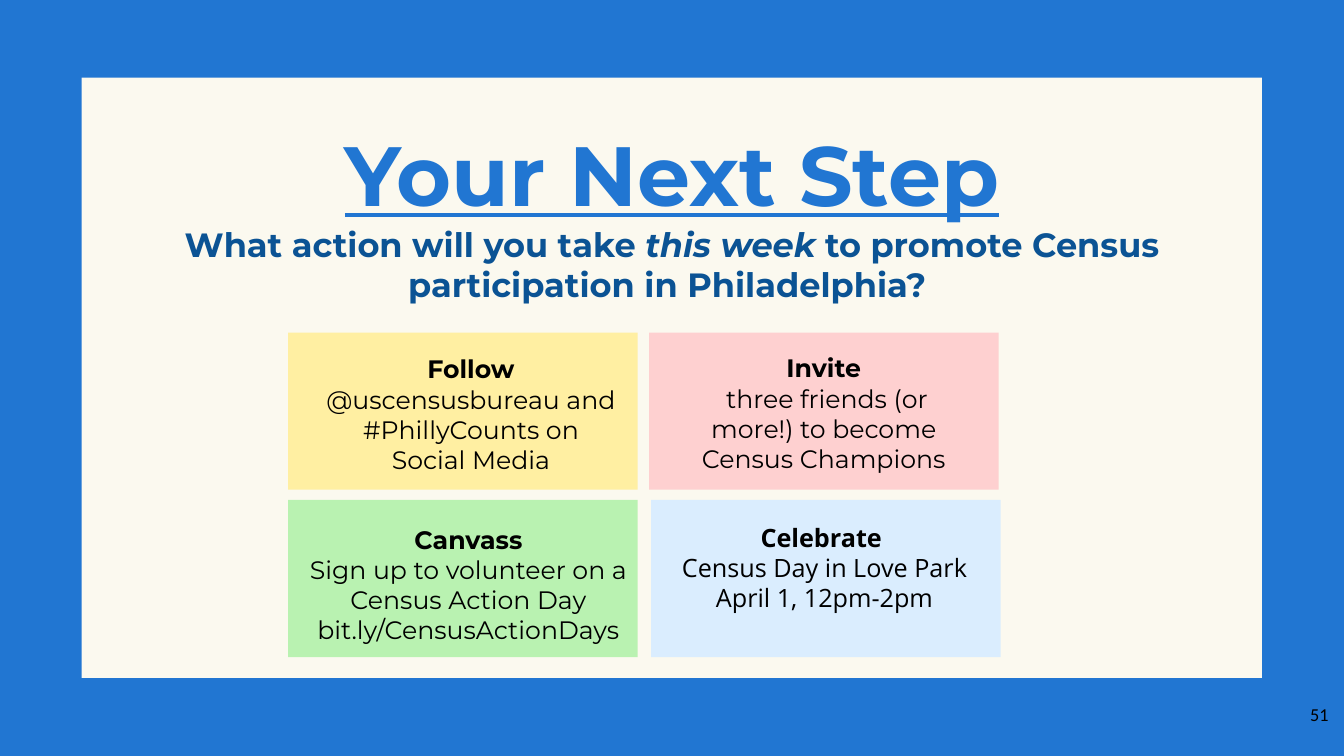
from pptx import Presentation
from pptx.dml.color import RGBColor
from pptx.enum.shapes import MSO_SHAPE
from pptx.enum.text import MSO_ANCHOR, PP_ALIGN
from pptx.util import Cm, Pt

RECTANGLE = MSO_SHAPE.RECTANGLE
TOP = MSO_ANCHOR.TOP
CENTER, RIGHT = PP_ALIGN.CENTER, PP_ALIGN.RIGHT

BLUE, NAVY, CREAM, BLACK = "2176D2", "0B5394", "FBF9EF", "000000"
WIDTH, HEIGHT = 33.87, 19.05
BAND, SIDE = 1.96, 2.06
CARD_WIDTH, CARD_HEIGHT = 8.81, 3.96

TITLE = "Your Next Step"
QUESTION = [
    ("What action will you take ", False),
    ("this week ", True),
    ("to promote Census participation in Philadelphia? ", False),
]
CARDS = [
    {"color": "FFEFA2", "at": (7.26, 8.38), "text_at": (7.92, 8.79, 7.9, 1.73),
     "font": "Montserrat",
     "lines": [[("Follow ", True),
                ("@uscensusbureau and #PhillyCounts on Social Media", False)]]},
    {"color": "FED0D0", "at": (16.36, 8.38), "text_at": (16.81, 8.76, 7.9, 2.79),
     "font": "Montserrat",
     "lines": [[("Invite", True)],
               [(" three friends (or more!) to become Census Champions", False)]]},
    {"color": "B9F2B1", "at": (7.26, 12.6), "text_at": (7.26, 13.08, 9.09, 2.13),
     "font": "Montserrat",
     "lines": [[("Canvass", True)],
               [("Sign up to volunteer on a Census Action Day", False)],
               [("bit.ly/CensusActionDays", False)]]},
    {"color": "DAEDFE", "at": (16.41, 12.6), "text_at": (16.26, 13.03, 9.04, 2.95),
     "font": "Open Sans",
     "lines": [[("Celebrate ", True)],
               [("Census Day in Love Park", False)],
               [("April 1, 12pm-2pm", False)]]},
]
PAGE_NUMBER = "51"


def rgb(color):
    return RGBColor.from_string(color)


def add_block(page, left, top, width, height, color):
    block = page.shapes.add_shape(RECTANGLE, Cm(left), Cm(top), Cm(width), Cm(height))
    block.shadow.inherit = False
    block.fill.solid()
    block.fill.fore_color.rgb = rgb(color)
    block.line.fill.background()


def add_frame(page, left, top, width, height):
    box = page.shapes.add_textbox(Cm(left), Cm(top), Cm(width), Cm(height))
    frame = box.text_frame
    frame.word_wrap = True
    frame.vertical_anchor = TOP
    return frame


def add_text(para, text, font, size, color, bold=False, italic=False,
             underline=False, align=CENTER):
    para.alignment = align
    span = para.add_run()
    span.text = text
    span.font.name = font
    span.font.size = Pt(size)
    span.font.bold = bold
    span.font.italic = italic
    span.font.underline = underline
    span.font.color.rgb = rgb(color)


def add_card(page, card):
    add_block(page, *card["at"], CARD_WIDTH, CARD_HEIGHT, card["color"])
    frame = add_frame(page, *card["text_at"])
    for index, line in enumerate(card["lines"]):
        para = frame.add_paragraph() if index else frame.paragraphs[0]
        for text, bold in line:
            add_text(para, text, font=card["font"], size=18, color=BLACK, bold=bold)


def main():
    deck = Presentation()
    deck.slide_width, deck.slide_height = Cm(WIDTH), Cm(HEIGHT)
    page = deck.slides.add_slide(deck.slide_layouts[6])
    page.background.fill.solid()
    page.background.fill.fore_color.rgb = rgb(CREAM)

    for top in (HEIGHT - BAND, 0):
        add_block(page, 0, top, WIDTH, BAND, BLUE)
    for left in (0, WIDTH - SIDE):
        add_block(page, left, 0, SIDE, HEIGHT, BLUE)

    heading = add_frame(page, 3.28, 2.97, 27.31, 2.82)
    add_text(heading.paragraphs[0], TITLE, font="Montserrat", size=60, color=BLUE,
             bold=True, underline=True)
    question = heading.add_paragraph()
    for text, italic in QUESTION:
        add_text(question, text, font="Montserrat", size=24, color=NAVY,
                 bold=True, italic=italic)

    for card in CARDS:
        add_card(page, card)

    number = add_frame(page, 31.7, 17.6, 2.03, 1.45)
    add_text(number.paragraphs[0], PAGE_NUMBER, font="Calibri", size=13, color=BLACK,
             align=RIGHT)
    deck.save("out.pptx")


if __name__ == "__main__":
    main()
